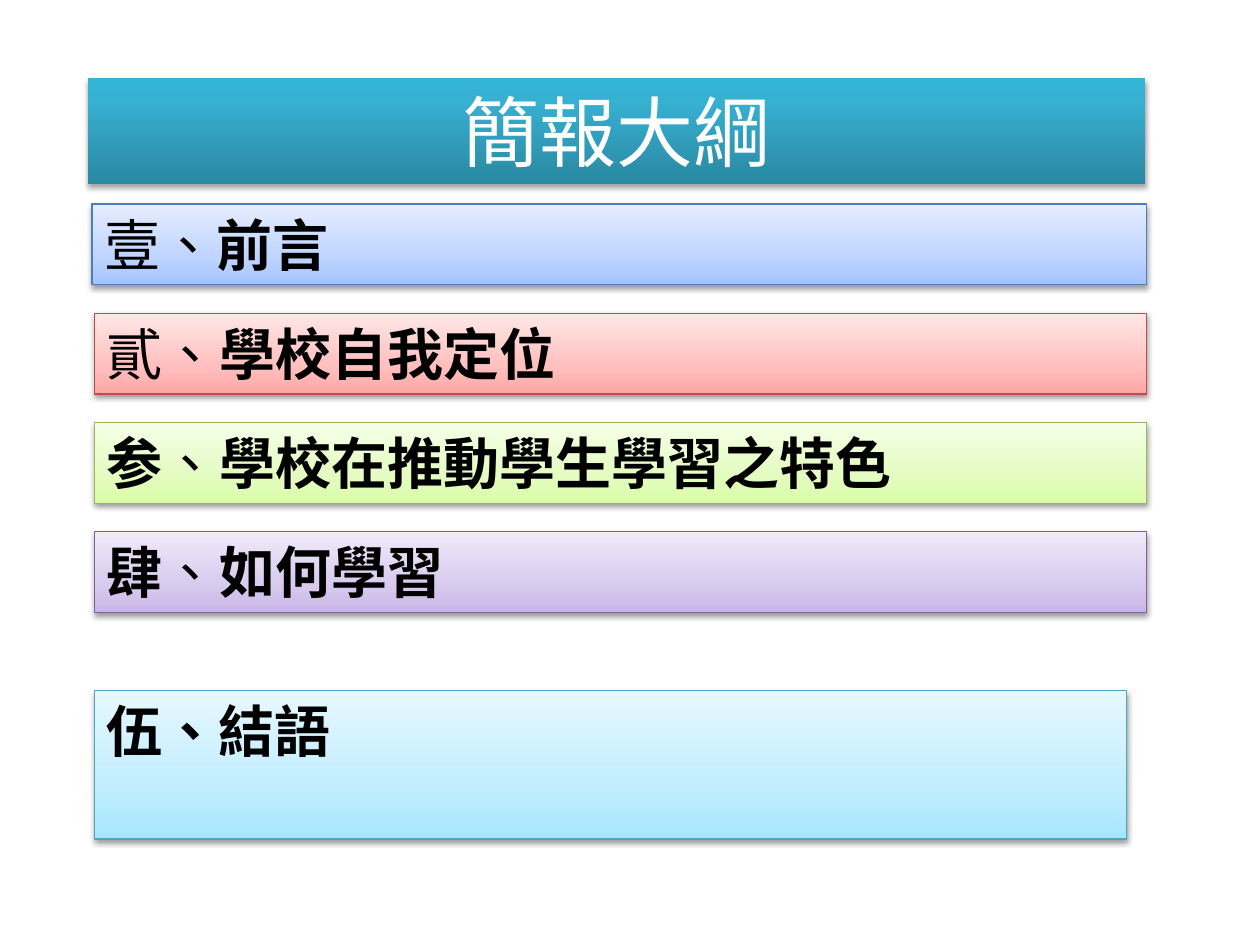
from lxml.etree import SubElement
from pptx import Presentation
from pptx.dml.color import RGBColor
from pptx.enum.shapes import MSO_SHAPE
from pptx.enum.text import MSO_ANCHOR, MSO_AUTO_SIZE, PP_ALIGN
from pptx.oxml.ns import qn
from pptx.util import Inches, Pt

COLORS = {
    "title": ("2A88A2", "37B1D2", "34B4D6"),
    "blue": ("A4C4FF", "BFD4FF", "E6EEFF"),
    "red": ("FFA6A5", "FFC0BF", "FFE7E7"),
    "green": ("DAFDA7", "E4FCC2", "F5FFE7"),
    "purple": ("C9B5E8", "D8CBEE", "F0EAF9"),
    "aqua": ("A7E6FF", "C1EDFF", "E7F8FF"),
}
LINES = {
    "blue": "4B7EBC",
    "red": "BF4C48",
    "green": "98B955",
    "purple": "7D60A0",
    "aqua": "46AAC5",
}
INK = {"white": "FFFFFF", "black": "000000"}
LATIN = "Calibri"
HAN = "Noto Sans CJK SC"
ROW_TOP, ROW_STEP, ROW_HEIGHT = 1.62, 0.867, 0.64


def add_gradient(box, colors, middle):
    """Fill a box with three colours running from bottom to top."""
    box.fill.gradient()
    gradient = box._element.spPr.find(qn("a:gradFill"))
    for child in list(gradient):
        gradient.remove(child)
    stops = SubElement(gradient, qn("a:gsLst"))
    for position, color in zip((0, middle, 100), colors):
        stop = SubElement(stops, qn("a:gs"), pos=str(position * 1000))
        SubElement(stop, qn("a:srgbClr"), val=color)
    SubElement(gradient, qn("a:lin"), ang="16200000", scaled="0")


def add_shadow(box, opacity, distance):
    """Give a box a soft black shadow straight below it."""
    box.shadow.inherit = False
    effects = box._element.spPr.find(qn("a:effectLst"))
    shadow = SubElement(effects, qn("a:outerShdw"), blurRad=str(Pt(3.1)),
                        dist=str(Pt(distance)), dir="5400000", rotWithShape="0")
    color = SubElement(shadow, qn("a:srgbClr"), val=INK["black"])
    SubElement(color, qn("a:alpha"), val=str(opacity * 1000))


def add_text(para, text, font=HAN, size=32, bold=False, color="black"):
    """Append one formatted run of Traditional Chinese."""
    span = para.add_run()
    span.text = text
    span.font.size = Pt(size)
    span.font.bold = bold
    span.font.color.rgb = RGBColor.from_string(INK[color])
    span.font.name = font
    properties = span._r.get_or_add_rPr()
    properties.set("lang", "zh-TW")
    SubElement(properties, qn("a:ea"), typeface=font)


def add_panel(page, left, top, width, height, name, middle=35, opacity=38, distance=1.6):
    """Draw a shaded panel and return its shape."""
    box = page.shapes.add_shape(MSO_SHAPE.RECTANGLE, Inches(left), Inches(top),
                                Inches(width), Inches(height))
    add_gradient(box, COLORS[name], middle)
    if name in LINES:
        box.line.color.rgb = RGBColor.from_string(LINES[name])
        box.line.width = Pt(0.75)
    else:
        box.line.fill.background()
    add_shadow(box, opacity, distance)
    box.text_frame.word_wrap = True
    return box


def add_title(page, text):
    """Draw the heading band."""
    box = add_panel(page, 0.7, 0.62, 8.39, 0.84, "title", middle=80, opacity=35, distance=1.8)
    box.text_frame.vertical_anchor = MSO_ANCHOR.MIDDLE
    para = box.text_frame.paragraphs[0]
    para.alignment = PP_ALIGN.CENTER
    add_text(para, text, font=LATIN, size=44, color="white")


def add_item(page, left, top, width, height, name, parts):
    """Draw one outline entry from (text, font, bold) parts."""
    box = add_panel(page, left, top, width, height, name)
    box.text_frame.vertical_anchor = MSO_ANCHOR.TOP
    box.text_frame.auto_size = MSO_AUTO_SIZE.SHAPE_TO_FIT_TEXT
    para = box.text_frame.paragraphs[0]
    para.alignment = PP_ALIGN.LEFT
    for text, font, bold in parts:
        add_text(para, text, font=font, bold=bold)


def main():
    """Build the outline slide."""
    deck = Presentation()
    deck.slide_width, deck.slide_height = Inches(10), Inches(7.5)
    page = deck.slides.add_slide(deck.slide_layouts[6])
    add_title(page, "簡報大綱")
    rows = [
        (0.73, "blue", [("壹、", HAN, False), ("前言", HAN, True)]),
        (0.75, "red", [("貳、", HAN, False), ("學校自我定位", HAN, True)]),
        (0.75, "green", [("参", HAN, True), ("、", LATIN, False),
                         ("學校在推動學生學習之特色", HAN, True)]),
        (0.75, "purple", [("肆", HAN, True), ("、", LATIN, False),
                          ("如何學習", LATIN, True)]),
    ]
    for index, (left, name, parts) in enumerate(rows):
        add_item(page, left, ROW_TOP + index * ROW_STEP, 9.1 - left, ROW_HEIGHT, name, parts)
    add_item(page, 0.75, 5.48, 8.19, 1.18, "aqua", [("伍、結語", LATIN, True)])
    deck.save("out.pptx")


if __name__ == "__main__":
    main()
